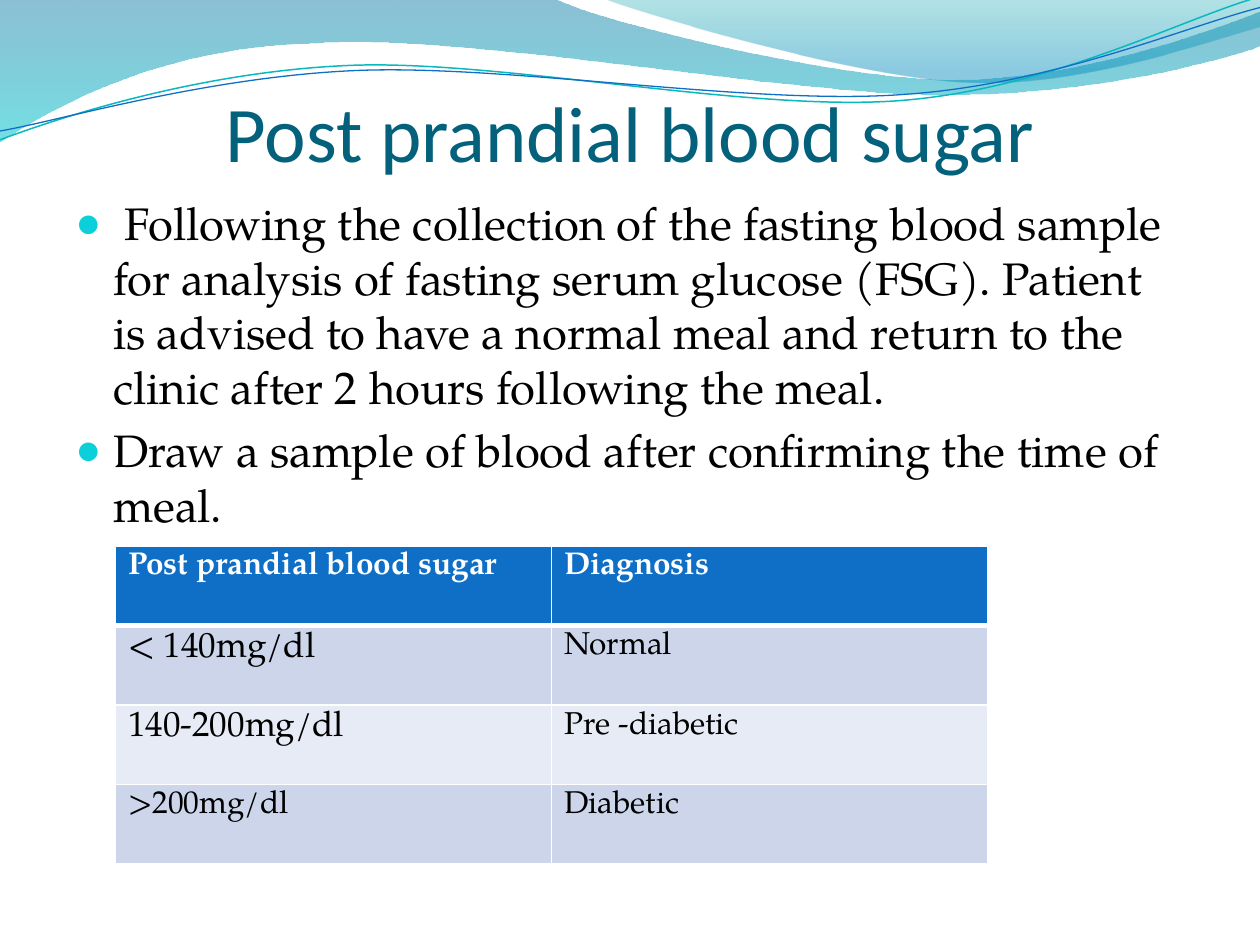
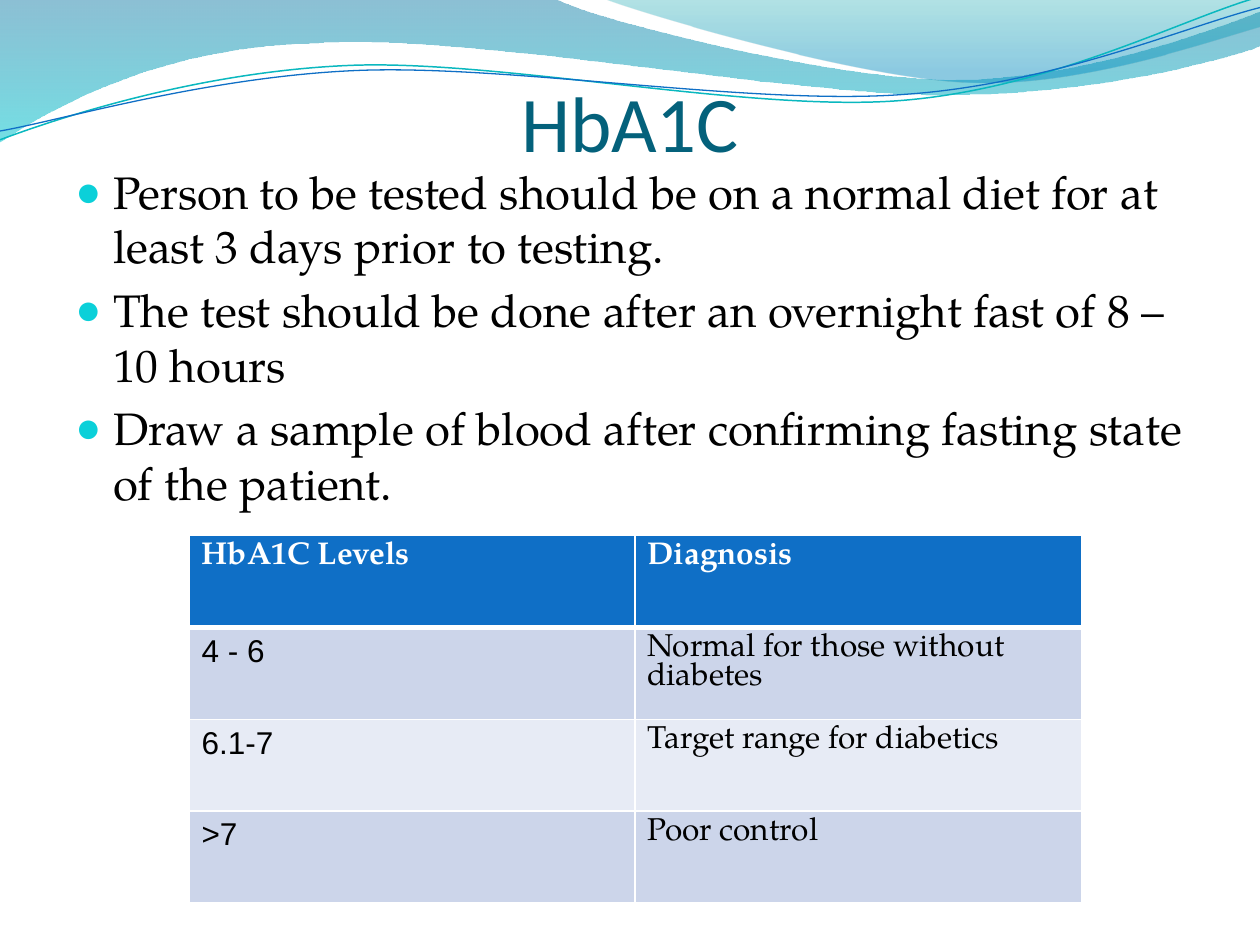
from lxml import etree
from pptx import Presentation
from pptx.dml.color import RGBColor
from pptx.enum.text import MSO_ANCHOR, MSO_AUTO_SIZE, PP_ALIGN
from pptx.oxml.ns import qn
from pptx.util import Cm, Pt

BOTTOM, TOP = MSO_ANCHOR.BOTTOM, MSO_ANCHOR.TOP
NO_AUTOFIT = MSO_AUTO_SIZE.NONE
CENTER, LEFT = PP_ALIGN.CENTER, PP_ALIGN.LEFT

SERIF, TITLE_FONT, SANS = "TeX Gyre Pagella", "Calibri", "Arial"
TITLE_TEAL = RGBColor(0x04, 0x61, 0x7B)
BLUE = RGBColor(0x0F, 0x6F, 0xC6)
LINE_TEAL = RGBColor(0x0A, 0xB8, 0xBF)
BULLET_CYAN = RGBColor(0x0B, 0xD0, 0xD9)
BLACK = RGBColor(0, 0, 0)
WHITE = RGBColor(0xFF, 0xFF, 0xFF)
ROW_DARK = RGBColor(0xCC, 0xD5, 0xEA)
ROW_LIGHT = RGBColor(0xE7, 0xEB, 0xF5)

# Wave outlines on a grid of 1000 x 750: pairs are corners, sixes are Bezier curves.
GRID = Cm(25.4) / 1000
WAVE_BANDS = [
    ([(0, 0), (440, -1), (476, 17, 664, 63, 758, 63), (853, 63, 958, 26, 1000, 9),
      (1001, 36), (983, 44, 870, 76, 746, 75), (622, 75, 382, 28, 257, 34),
      (129, 36, 46, 83, -1, 113)],
     [(0, RGBColor(0x00, 0x74, 0xA1), 45), (1, RGBColor(0x00, 0xC6, 0xCF), 55)]),
    ([(479, -1), (509, 11, 682, 62, 769, 65), (856, 69, 961, 32, 1000, 21), (1000, 0)],
     [(0, RGBColor(0x00, 0xA1, 0xA9), 30), (0.8, RGBColor(0x00, 0x8B, 0xBF), 45)]),
]
WAVE_LINES = [
    ([(0, 111), (48, 93, 158, 57, 277, 52), (395, 47, 593, 89, 713, 80),
      (833, 71, 938, 15, 998, -2)], LINE_TEAL, 0.85),
    ([(0, 104), (47, 96, 164, 61, 283, 56), (403, 51, 597, 84, 717, 75),
      (836, 67, 941, 21, 1000, 6)], BLUE, 0.75),
]


def write(p, text, *, size, font=SERIF, color=BLACK, bold=False, align=LEFT):
    r = p.add_run()
    r.text = text
    r.font.size = Pt(size)
    r.font.name = font
    r.font.color.rgb = color
    r.font.bold = bold
    p.alignment = align


def add_outline(s, outline, close):
    """Build a freeform through all points, then merge each curve's three steps into one."""
    points = [pair for part in outline for pair in zip(part[::2], part[1::2])]
    fb = s.shapes.build_freeform(*points[0], scale=GRID)
    fb.add_line_segments(points[1:], close=close)
    sp = fb.convert_to_shape()
    sp.shadow.inherit = False
    steps = iter(list(sp.element.iter(qn("a:lnTo"))))
    for part in outline[1:]:
        step = next(steps)
        if len(part) == 6:
            curve = etree.Element(qn("a:cubicBezTo"))
            step.addprevious(curve)
            for control in (step, next(steps), next(steps)):
                curve.append(control[0])
                control.getparent().remove(control)
    return sp


def add_waves(s):
    shapes = []
    for outline, stops in WAVE_BANDS:
        sp = add_outline(s, outline, True)
        sp.line.fill.background()
        sp.fill.gradient()
        sp.fill.gradient_angle = 270
        for stop, (position, color, _) in zip(sp.fill.gradient_stops, stops):
            stop.position = position
            stop.color.rgb = color
        grad = sp.element.spPr.find(qn("a:gradFill"))
        for clr, (_, _, opacity) in zip(grad.iter(qn("a:srgbClr")), stops):
            etree.SubElement(clr, qn("a:alpha"), val=str(opacity * 1000))
        shapes.append(sp)
    for outline, color, width in WAVE_LINES:
        sp = add_outline(s, outline, False)
        sp.fill.background()
        sp.line.color.rgb = color
        sp.line.width = Pt(width)
        shapes.append(sp)
    return shapes


def move_to_layout(shapes, layout):
    """Put the shapes at the back of the layout, so that every slide shows them."""
    tree = layout.shapes.element
    for i, sp in enumerate(shapes):
        sp.element.nvSpPr.cNvPr.set("id", str(101 + i))
        tree.insert(2 + i, sp.element)


def set_title(s, text, box):
    sp = s.shapes.title
    sp.left, sp.top, sp.width, sp.height = map(Cm, box)
    tf = sp.text_frame
    tf.auto_size = NO_AUTOFIT
    tf.vertical_anchor = BOTTOM
    tf.margin_left = tf.margin_right = tf.margin_bottom = 0
    write(tf.paragraphs[0], text, size=45, font=TITLE_FONT, color=TITLE_TEAL, align=CENTER)


def add_bullets(s, items, box):
    tf = s.shapes.add_textbox(*map(Cm, box)).text_frame
    tf.word_wrap = True
    for i, item in enumerate(items):
        p = tf.add_paragraph() if i else tf.paragraphs[0]
        write(p, item, size=26)
        p.space_before = Pt(5.2)
        pPr = p._p.get_or_add_pPr()
        pPr.set("marL", str(Cm(0.76)))
        pPr.set("indent", str(-Cm(0.76)))
        clr = etree.SubElement(pPr, qn("a:buClr"))
        etree.SubElement(clr, qn("a:srgbClr"), val=str(BULLET_CYAN))
        etree.SubElement(pPr, qn("a:buSzPct"), val="95000")
        etree.SubElement(pPr, qn("a:buFont"), typeface=SANS)
        etree.SubElement(pPr, qn("a:buChar"), char="●")


def set_borders(cell, **widths):
    tcPr = cell._tc.get_or_add_tcPr()
    for i, side in enumerate("LRTB"):
        ln = etree.Element(qn(f"a:ln{side}"), w=str(Pt(widths.get(side, 1))))
        fill = etree.SubElement(ln, qn("a:solidFill"))
        etree.SubElement(fill, qn("a:srgbClr"), val=str(WHITE))
        tcPr.insert(i, ln)


def add_levels_table(s, rows, box, level_format):
    """Add a header row and banded rows; level_format holds the first column's format per row."""
    table = s.shapes.add_table(len(rows), 2, *map(Cm, box)).table
    for i, row in enumerate(rows):
        for j, text in enumerate(row):
            cell = table.cell(i, j)
            cell.vertical_anchor = TOP
            cell.fill.solid()
            cell.fill.fore_color.rgb = (ROW_DARK if i % 2 else ROW_LIGHT) if i else BLUE
            set_borders(cell, T=3 if i == 1 else 1, B=1 if i else 3)
            style = {"size": 18, "color": BLACK if i else WHITE, "bold": i == 0}
            if i and j == 0:
                style.update(level_format[i - 1])
            p = cell.text_frame.paragraphs[0]
            write(p, text, **style)
            if style.get("font") != SANS:
                p.line_spacing = 0.9


def add_test_slide(prs, title, title_box, bullets, bullets_box, rows, table_box, level_format):
    s = prs.slides.add_slide(prs.slide_layouts[5])
    set_title(s, title, title_box)
    add_bullets(s, bullets, bullets_box)
    add_levels_table(s, rows, table_box, level_format)
    return s


def main():
    prs = Presentation()
    prs.slide_width, prs.slide_height = Cm(25.4), Cm(19.05)
    s = add_test_slide(
        prs, "Post prandial blood sugar", (1.27, 1.96, 22.86, 1.63),
        [" Following the collection of the fasting blood sample for analysis of fasting serum "
         "glucose (FSG). Patient is advised to have a normal meal and return to the clinic "
         "after 2 hours following the meal.",
         "Draw a sample of blood after confirming the time of meal."],
        (1.27, 3.81, 22.86, 13.77),
        [("Post prandial blood sugar", "Diagnosis"),
         ("< 140mg/dl", "Normal"),
         ("140-200mg/dl", "Pre -diabetic"),
         (">200mg/dl", "Diabetic")],
        (2.33, 11.01, 17.58, 6.4),
        [{"size": 20}, {"size": 20}, {}])
    move_to_layout(add_waves(s), s.slide_layout)
    add_test_slide(
        prs, "HbA1C", (1.27, 1.96, 22.86, 1.43),
        ["Person to be tested should be on a normal diet for at least 3 days prior to testing.",
         "The test should be done after an overnight fast of 8 – 10 hours",
         "Draw a sample of blood after confirming fasting state of the patient."],
        (1.27, 3.18, 22.86, 15.87),
        [("HbA1C Levels", "Diagnosis"),
         ("4 - 6", "Normal for those without diabetes"),
         ("6.1-7", "Target range for diabetics"),
         (">7", "Poor control")],
        (3.81, 10.8, 17.99, 7.4),
        [{"font": SANS}] * 3)
    prs.save("out.pptx")


if __name__ == "__main__":
    main()
